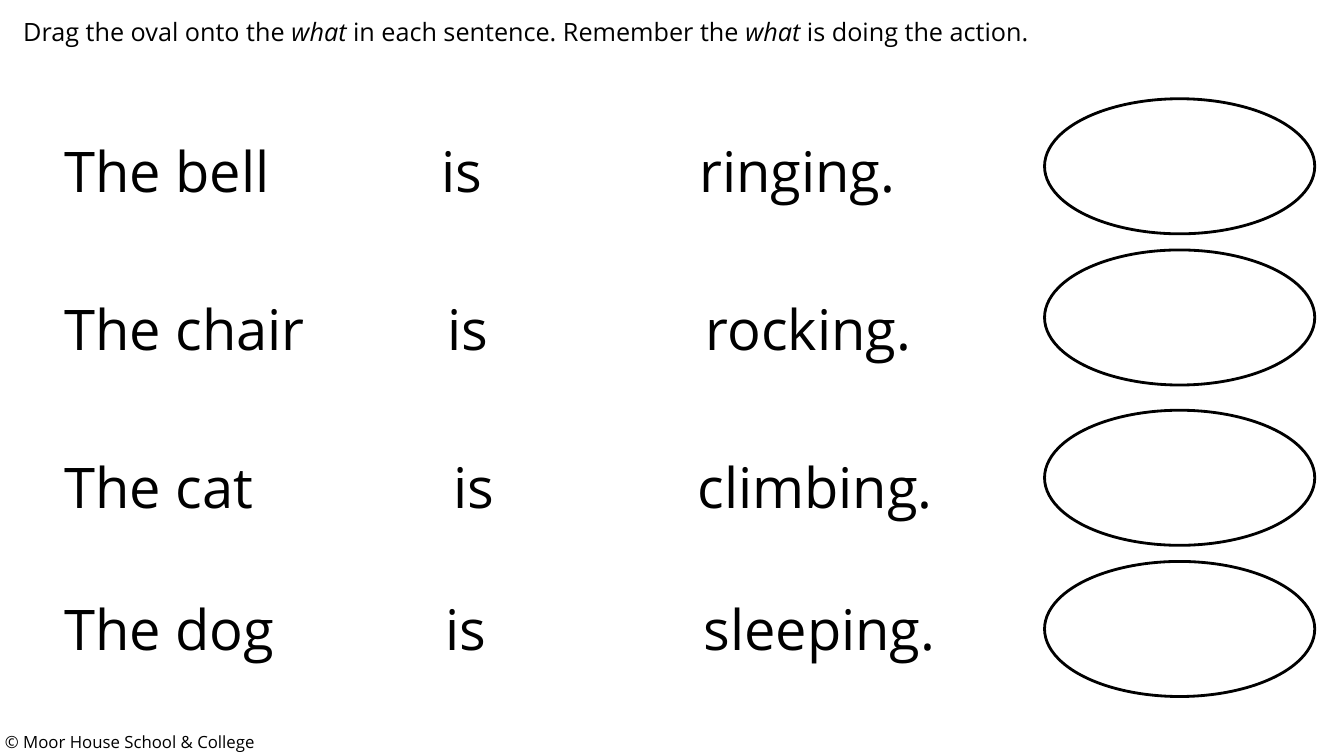
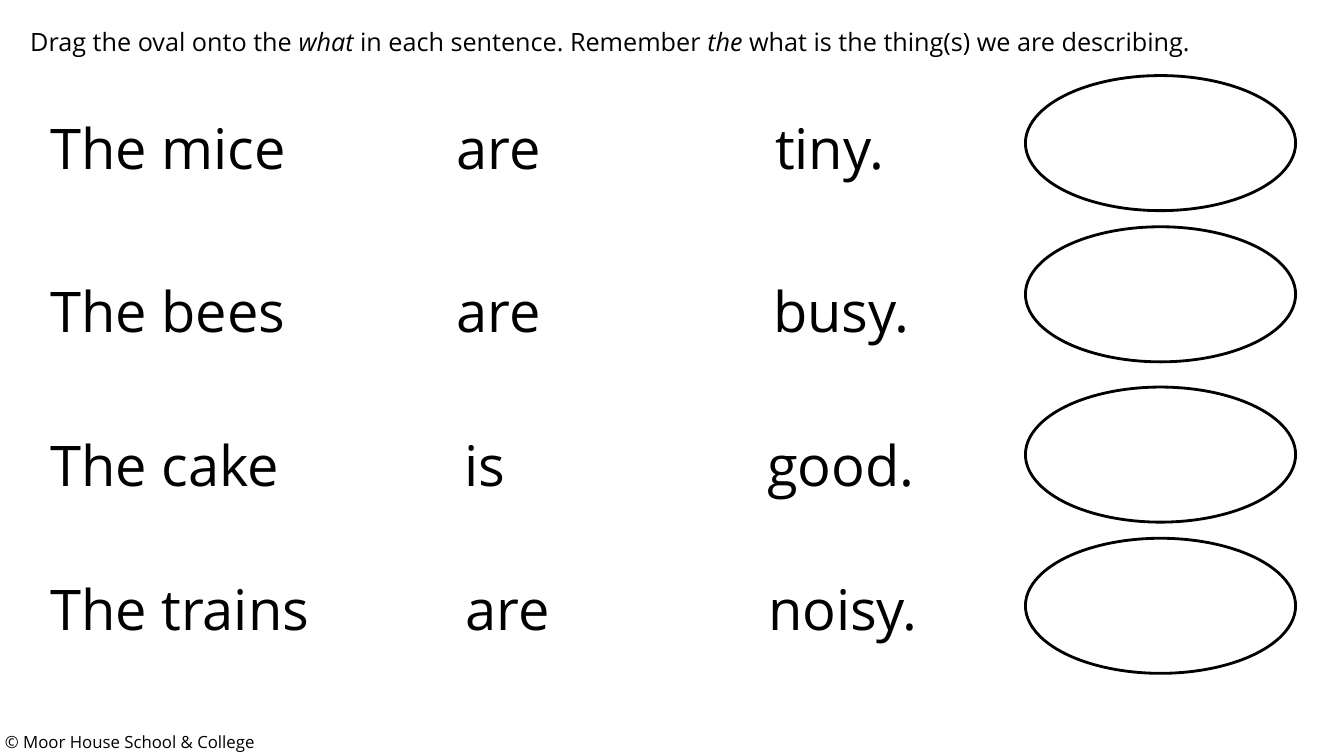
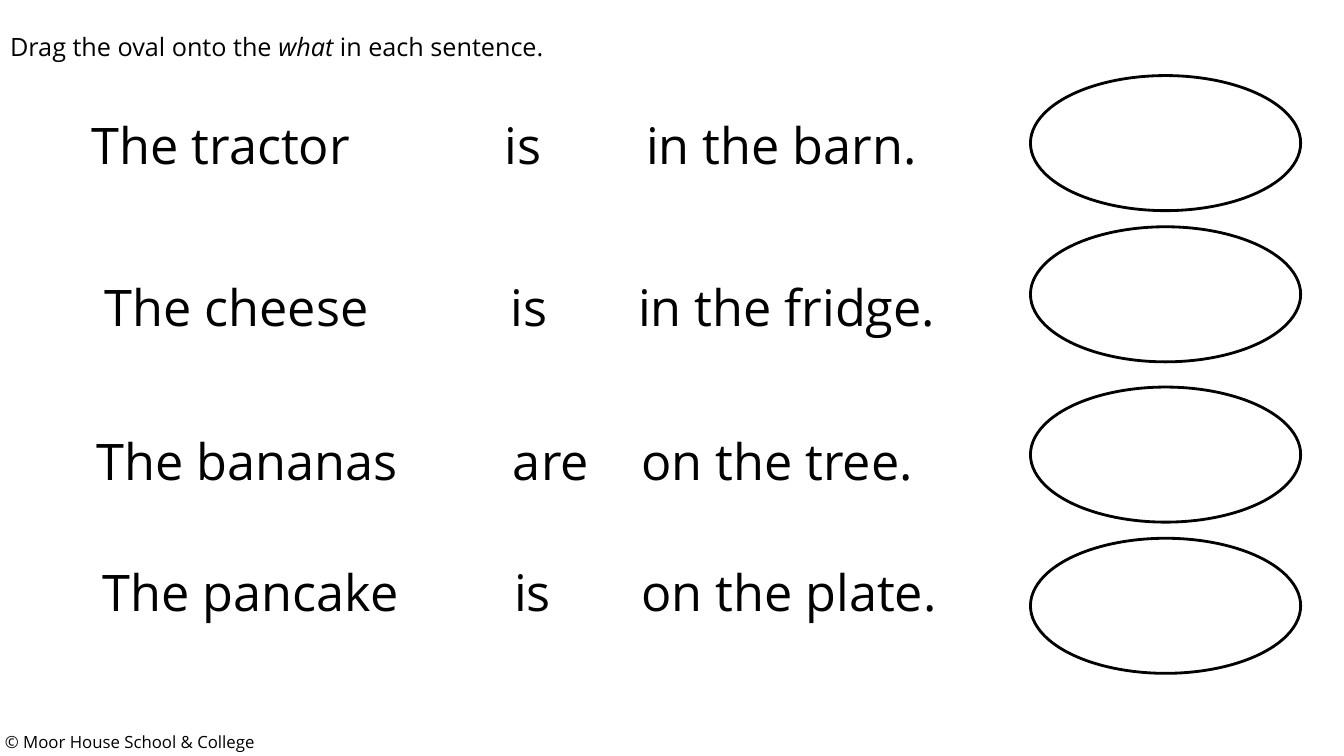
import pptx
import pptx.util
import pptx.dml.color
import pptx.enum.shapes
import pptx.enum.text
import pptx.oxml.ns
import lxml.etree

Inches = pptx.util.Inches
Pt = pptx.util.Pt

# Shared style
BLACK = pptx.dml.color.RGBColor(0x00, 0x00, 0x00)
FONT = "Open Sans"
FOOTER = "© Moor House School & College"
INSET = 0.1
OVAL_WIDTH, OVAL_HEIGHT = 2.68, 1.34
OVAL_STEPS = [0, 1.5, 3.09, 4.59]

# Instruction parts alternate between upright and italic.
# Sentence rows: left, top, then each word group with the tab stop it starts at.
SLIDES = [
    {
        "instruction": ["Drag the oval onto the ", "what", " in each sentence. Remember the ",
                        "what", " is doing the action."],
        "instruction_at": (0.13, 0.11),
        "oval_at": (10.36, 0.98),
        "size": 40,
        "sentences": [
            (0.54, 1.31, "The bell", (3.74, "is"), (6.3, "ringing.")),
            (0.54, 2.87, "The chair", (3.8, "is"), (6.36, "rocking.")),
            (0.54, 4.44, "The cat", (3.86, "is"), (6.28, "climbing.")),
            (0.54, 5.85, "The dog", (3.78, "is"), (6.34, "sleeping.")),
        ],
    },
    {
        "instruction": ["Drag the oval onto the ", "what", " in each sentence. Remember ",
                        "the", " what is the thing(s) we are describing."],
        "instruction_at": (0.2, 0.21),
        "oval_at": (10.17, 0.75),
        "size": 40,
        "sentences": [
            (0.4, 1.08, "The mice", (4.03, "are"), (7.19, "tiny.")),
            (0.4, 2.69, "The bees", (4.03, "are"), (7.17, "busy.")),
            (0.4, 4.22, "The cake", (4.11, "is"), (7.11, "good.")),
            (0.4, 5.65, "The trains", (4.12, "are"), (7.12, "noisy.")),
        ],
    },
    {
        "instruction": ["Drag the oval onto the ", "what", " in each sentence."],
        "instruction_at": (0, 0.26),
        "oval_at": (10.22, 0.75),
        "size": 36,
        "sentences": [
            (0.81, 1.08, "The tractor", (4.1, "is"), (5.5, "in the barn.")),
            (0.94, 2.69, "The cheese", (4.03, "is"), (5.29, "in the fridge.")),
            (0.86, 4.22, "The bananas", (4.13, "are"), (5.4, "on the tree.")),
            (0.92, 5.52, "The pancake", (4.08, "is"), (5.34, "on the plate.")),
        ],
    },
]


def prepare_frame(shape):
    """Give a text shape the common margins, wrapping and anchor."""
    frame = shape.text_frame
    frame.word_wrap = True
    frame.auto_size = pptx.enum.text.MSO_AUTO_SIZE.NONE
    frame.vertical_anchor = pptx.enum.text.MSO_ANCHOR.TOP
    frame.margin_left = frame.margin_right = Inches(INSET)
    frame.margin_top = frame.margin_bottom = Inches(0.05)
    return frame


def format_runs(paragraph, size):
    """Left-align a paragraph and set the common font on its runs."""
    paragraph.alignment = pptx.enum.text.PP_ALIGN.LEFT
    for run in paragraph.runs:
        run.font.name = FONT
        run.font.size = Pt(size)
        run.font.color.rgb = BLACK


presentation = pptx.Presentation()
presentation.slide_width = Inches(13.33)
presentation.slide_height = Inches(7.5)
title_only = presentation.slide_layouts[5]

for content in SLIDES:
    slide = presentation.slides.add_slide(title_only)

    # Instruction
    title = slide.shapes.title
    left, top = content["instruction_at"]
    title.left, title.top = Inches(left), Inches(top)
    title.width, title.height = Inches(13.1), Inches(0.4)
    paragraph = prepare_frame(title).paragraphs[0]
    for index, part in enumerate(content["instruction"]):
        run = paragraph.add_run()
        run.text = part
        run.font.italic = index % 2 == 1
    format_runs(paragraph, 18)

    # Sentences, with the word groups on tab stops
    for left, top, subject, *groups in content["sentences"]:
        sentence = slide.shapes.add_textbox(Inches(left), Inches(top), Inches(9.4), Inches(0.77))
        paragraph = prepare_frame(sentence).paragraphs[0]
        paragraph.text = "\t".join([subject] + [words for stop, words in groups])
        tab_list = lxml.etree.SubElement(
            paragraph._p.get_or_add_pPr(), pptx.oxml.ns.qn("a:tabLst"))
        for stop, words in groups:
            lxml.etree.SubElement(tab_list, pptx.oxml.ns.qn("a:tab"),
                                  pos=str(int(Inches(stop))), algn="l")
        format_runs(paragraph, content["size"])

    # Ovals to drag
    left, top = content["oval_at"]
    for step in OVAL_STEPS:
        oval = slide.shapes.add_shape(
            pptx.enum.shapes.MSO_SHAPE.OVAL, Inches(left), Inches(top + step),
            Inches(OVAL_WIDTH), Inches(OVAL_HEIGHT))
        oval.shadow.inherit = False
        oval.fill.background()
        oval.line.color.rgb = BLACK
        oval.line.width = Pt(2)

# Footer, moved to the master so that every slide shows it
footer = slide.shapes.add_textbox(Inches(-0.05), Inches(7.21), Inches(5.12), Inches(0.3))
footer_frame = prepare_frame(footer)
footer_frame.text = FOOTER
format_runs(footer_frame.paragraphs[0], 12)
presentation.slide_master.shapes.element.append(footer.element)

presentation.save("out.pptx")
